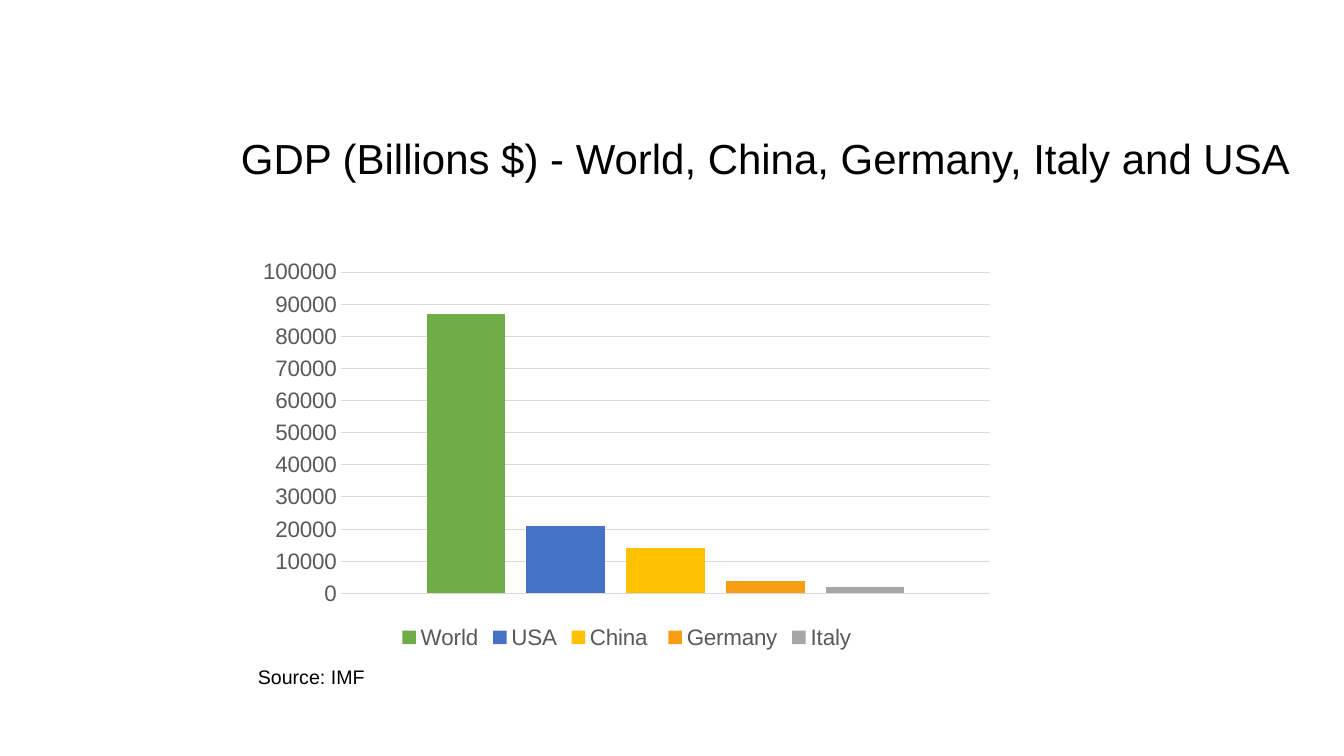
from typing import NamedTuple

from pptx import Presentation
from pptx.chart.data import CategoryChartData
from pptx.dml.color import RGBColor
from pptx.enum.chart import XL_CHART_TYPE, XL_LEGEND_POSITION, XL_TICK_MARK
from pptx.enum.text import MSO_ANCHOR, MSO_AUTO_SIZE, PP_ALIGN
from pptx.shapes.autoshape import Shape
from pptx.slide import Slide
from pptx.text.text import Font
from pptx.util import Cm, Pt

CLUSTERED = XL_CHART_TYPE.COLUMN_CLUSTERED
LEGEND_BOTTOM = XL_LEGEND_POSITION.BOTTOM
NO_TICKS = XL_TICK_MARK.NONE
TOP = MSO_ANCHOR.TOP
LEFT = PP_ALIGN.LEFT
FIXED_SIZE = MSO_AUTO_SIZE.NONE

BLACK = RGBColor(0x00, 0x00, 0x00)
WHITE = RGBColor(0xFF, 0xFF, 0xFF)
LABEL_GREY = RGBColor(0x59, 0x59, 0x59)
GRID_GREY = RGBColor(0xD9, 0xD9, 0xD9)
GREEN = RGBColor(0x70, 0xAD, 0x47)
BLUE = RGBColor(0x44, 0x72, 0xC4)
YELLOW = RGBColor(0xFF, 0xC0, 0x00)
ORANGE = RGBColor(0xF5, 0x9E, 0x14)
SILVER = RGBColor(0xA6, 0xA6, 0xA6)

FONT = "Arial"


class Economy(NamedTuple):
    name: str
    gdp: int
    color: RGBColor


class Box(NamedTuple):
    """Left, top, width and height in centimetres."""
    left: float
    top: float
    width: float
    height: float


ECONOMIES = [
    Economy("World", 87000, GREEN),
    Economy("USA", 21000, BLUE),
    Economy("China ", 14000, YELLOW),
    Economy("Germany", 4000, ORANGE),
    Economy("Italy", 2000, SILVER),
]
TITLE_BOX = Box(5.82, 3.2, 27.43, 1.55)
CHART_BOX = Box(6.25, 6.35, 19.1, 10.13)
SOURCE_BOX = Box(6.25, 16.64, 5.49, 0.86)


def style_font(font: Font, size: float, color: RGBColor) -> None:
    font.name = FONT
    font.size = Pt(size)
    font.color.rgb = color


def write_line(shape: Shape, text: str, size: float) -> None:
    """Fill a text shape with one left-aligned line."""
    frame = shape.text_frame
    frame.word_wrap = True
    frame.auto_size = FIXED_SIZE
    frame.vertical_anchor = TOP
    paragraph = frame.paragraphs[0]
    paragraph.alignment = LEFT
    run = paragraph.add_run()
    run.text = text
    style_font(run.font, size, BLACK)


def add_gdp_chart(slide: Slide, economies: list[Economy], box: Box) -> None:
    gdp_data = CategoryChartData()
    gdp_data.categories = ["1"]
    for economy in economies:
        gdp_data.add_series(economy.name, [economy.gdp])
    chart = slide.shapes.add_chart(CLUSTERED, *map(Cm, box), gdp_data).chart
    chart.has_title = False
    style_font(chart.font, 16, LABEL_GREY)

    # Columns
    columns = chart.plots[0]
    columns.vary_by_categories = False
    columns.gap_width = 219
    columns.overlap = -27
    for series, economy in zip(columns.series, economies):
        series.format.fill.solid()
        series.format.fill.fore_color.rgb = economy.color

    # Axes
    chart.category_axis.visible = False
    gdp_axis = chart.value_axis
    gdp_axis.minimum_scale = 0
    gdp_axis.maximum_scale = 100000
    gdp_axis.major_unit = 10000
    gdp_axis.major_tick_mark = NO_TICKS
    gdp_axis.minor_tick_mark = NO_TICKS
    gdp_axis.format.line.fill.background()
    style_font(gdp_axis.tick_labels.font, 16, LABEL_GREY)
    gridline = gdp_axis.major_gridlines.format.line
    gridline.color.rgb = GRID_GREY
    gridline.width = Pt(0.75)

    # Legend
    chart.has_legend = True
    chart.legend.position = LEGEND_BOTTOM
    chart.legend.include_in_layout = False
    style_font(chart.legend.font, 16, LABEL_GREY)


def main() -> None:
    deck = Presentation()
    deck.slide_width = Cm(33.88)
    deck.slide_height = Cm(19.05)
    slide = deck.slides.add_slide(deck.slide_layouts.get_by_name("Title Only"))
    slide.background.fill.solid()
    slide.background.fill.fore_color.rgb = WHITE

    # Title
    title = slide.shapes.title
    title.left, title.top, title.width, title.height = map(Cm, TITLE_BOX)
    write_line(title, "GDP (Billions $) - World, China, Germany, Italy and USA", 30)

    # Chart and its source
    add_gdp_chart(slide, ECONOMIES, CHART_BOX)
    source = slide.shapes.add_textbox(*map(Cm, SOURCE_BOX))
    write_line(source, "Source: IMF", 14)

    deck.save("out.pptx")


if __name__ == "__main__":
    main()
